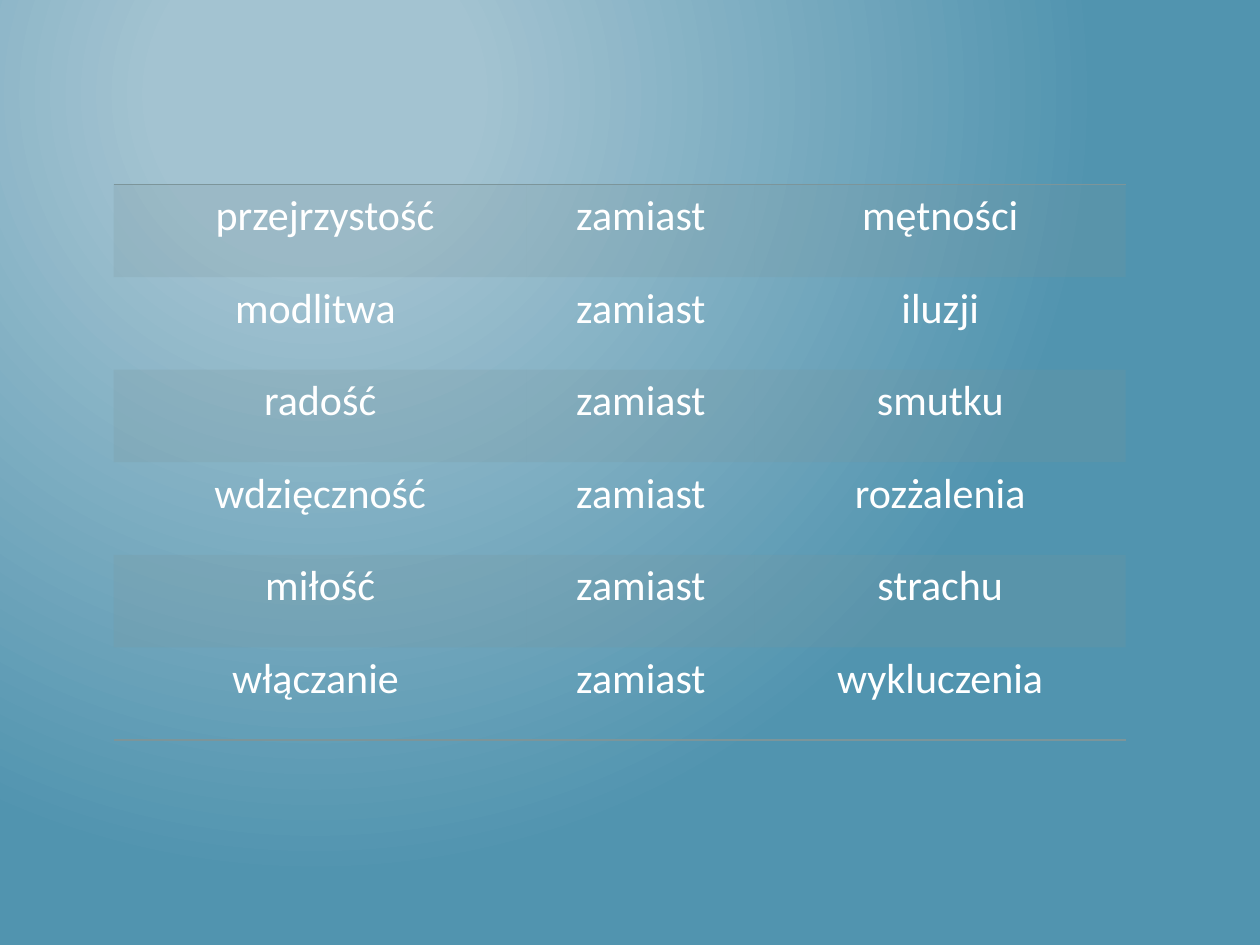
import pptx
import pptx.dml.color
import pptx.enum.text
import pptx.oxml
import pptx.oxml.ns
import pptx.util
import lxml.etree

Cm = pptx.util.Cm
RGBColor = pptx.dml.color.RGBColor
WHITE = RGBColor(0xFF, 0xFF, 0xFF)
SLATE = RGBColor(0x7C, 0x95, 0x9A)
PALE_BLUE = RGBColor(0xA3, 0xC3, 0xD1)
DEEP_BLUE = RGBColor(0x51, 0x94, 0xAF)

PLAIN_TABLE_STYLE = "{2D5ABB26-0587-4C30-8999-92F81FD0307C}"
TEXT_FORMAT = {"name": "Calibri", "size": pptx.util.Pt(24)}
TABLE_FORMAT = {"first_row": False, "horz_banding": False}
COLUMN_WIDTHS = [Cm(8.33), Cm(4.6), Cm(7.47)]
LINK_WORD = "zamiast"
PAIRS = [
    (" przejrzystość", "mętności"),
    ("modlitwa ", "iluzji"),
    ("radość", "smutku"),
    ("wdzięczność", "rozżalenia"),
    ("miłość", "strachu"),
    ("włączanie ", "wykluczenia"),
]


def add_child(parent, tag, **attributes):
    return lxml.etree.SubElement(parent, pptx.oxml.ns.qn(tag), attributes)


def paint_background(page):
    fill = page.background.fill
    fill.gradient()
    for stop, color, position in zip(
        fill.gradient_stops, (PALE_BLUE, DEEP_BLUE), (0.2, 1)
    ):
        stop.color.rgb = color
        stop.position = position
    gradient = page.element.xpath(".//p:bg//a:gradFill")[0]
    gradient.remove(gradient.find(pptx.oxml.ns.qn("a:lin")))
    circle = add_child(gradient, "a:path", path="circle")
    add_child(circle, "a:fillToRect", l="50000", t="20000", r="100000", b="100000")


def shade_cell(cell):
    cell.fill.solid()
    cell.fill.fore_color.rgb = SLATE
    color = cell.fill._xPr.xpath("./a:solidFill/a:srgbClr")[0]
    add_child(color, "a:alpha", val="20000")


def rule_cell(cell, tag):
    properties = cell._tc.get_or_add_tcPr()
    line = add_child(properties, tag, w=str(pptx.util.Pt(1)))
    add_child(add_child(line, "a:solidFill"), "a:srgbClr", val=str(SLATE))
    properties.insert(0, line)


def write_cell(cell, text):
    para = cell.text_frame.paragraphs[0]
    para.alignment = pptx.enum.text.PP_ALIGN.CENTER
    span = para.add_run()
    span.text = text
    for name, value in TEXT_FORMAT.items():
        setattr(span.font, name, value)
    span.font.color.rgb = WHITE


def add_contrast_table(page, left, top, width, height):
    box = page.shapes.add_table(
        len(PAIRS), len(COLUMN_WIDTHS), left, top, width, height
    )
    table = box.table
    for name, value in TABLE_FORMAT.items():
        setattr(table, name, value)
    box._element.xpath(".//a:tableStyleId")[0].text = PLAIN_TABLE_STYLE
    for column, column_width in zip(table.columns, COLUMN_WIDTHS):
        column.width = column_width
    last = len(PAIRS) - 1
    for index, (chosen, avoided) in enumerate(PAIRS):
        for cell, text in zip(table.rows[index].cells, (chosen, LINK_WORD, avoided)):
            write_cell(cell, text)
            if index % 2 == 0:
                shade_cell(cell)
            else:
                cell.fill.background()
            if index == 0:
                rule_cell(cell, "a:lnT")
            if index == last:
                rule_cell(cell, "a:lnB")


def main():
    deck = pptx.Presentation()
    deck.slide_width, deck.slide_height = Cm(25.4), Cm(19.05)
    page = deck.slides.add_slide(deck.slide_layouts[6])
    paint_background(page)
    add_contrast_table(page, Cm(2.29), Cm(3.72), sum(COLUMN_WIDTHS), Cm(11.2))
    deck.save("out.pptx")


if __name__ == "__main__":
    main()
